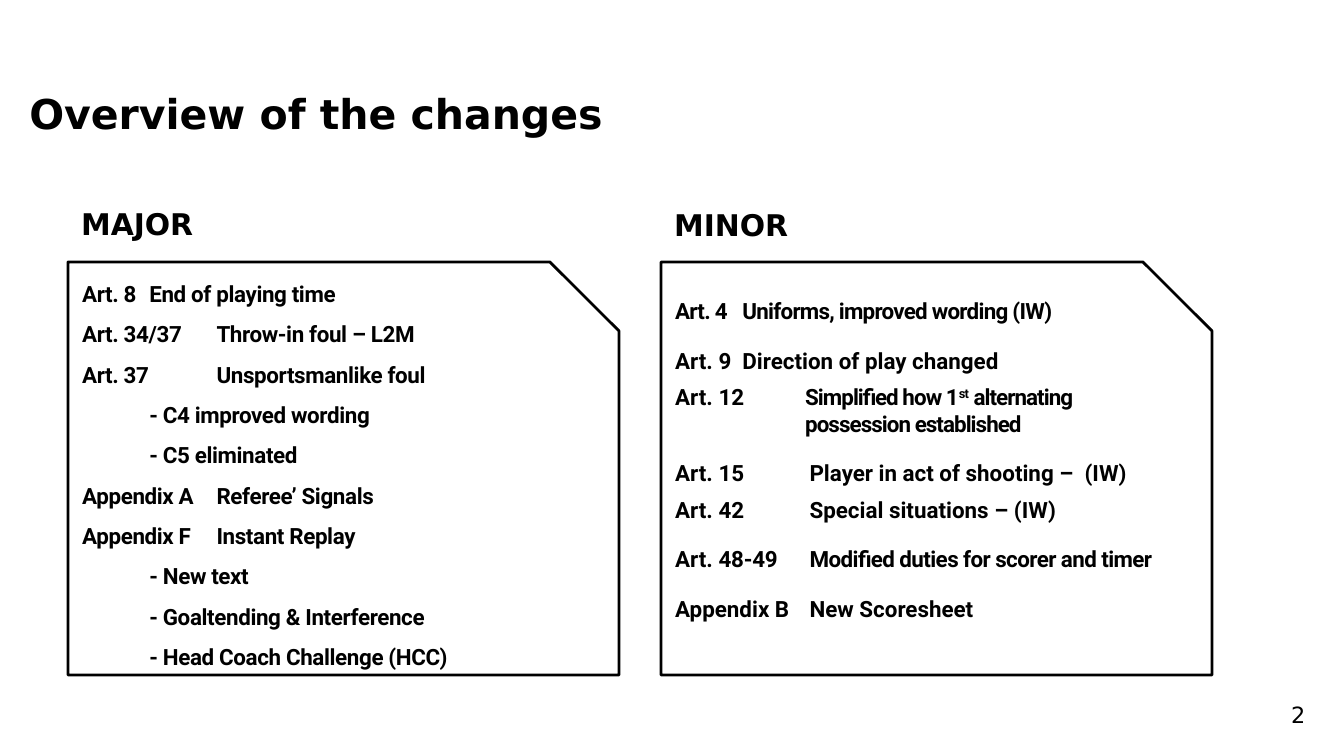
from lxml import etree
from pptx import Presentation
from pptx.dml.color import RGBColor
from pptx.enum.shapes import MSO_SHAPE
from pptx.enum.text import MSO_ANCHOR, PP_ALIGN
from pptx.oxml.ns import qn
from pptx.util import Pt

PX = 6804
BLACK = RGBColor(0x00, 0x00, 0x00)
SNIPPED = MSO_SHAPE.SNIP_ROUND_RECTANGLE
MIDDLE = MSO_ANCHOR.MIDDLE
LEFT = PP_ALIGN.LEFT
HEADING_FONT = "DejaVu Sans"
LIST_FONT = "Roboto"
TITLE_ONLY = 5
TAB = 130
INDENT = 1

MAJOR = [
    "Art. 8 \tEnd of playing time",
    "Art. 34/37 \tThrow-in foul – L2M",
    "Art. 37 \tUnsportsmanlike foul",
    "\t- C4 improved wording",
    "\t- C5 eliminated",
    "Appendix A \tReferee’ Signals",
    "Appendix F \tInstant Replay",
    "\t- New text",
    "\t- Goaltending & Interference",
    "\t- Head Coach Challenge (HCC)",
]
MAJOR_ROWS = [(1.5, 0, [(text, -20)]) for text in MAJOR]
MINOR_ROWS = [
    (1.5, 0, [("Art. 4 \tUniforms, improved wording (IW)", -40)]),
    (1.5, 0, [("Art. 9\tDirection of play changed", 0)]),
    (1.0, TAB, [("Art. 12 \t", 0), ("Simplified how 1", -50), ("st", -50, 30000),
                (" alternating possession established", -50)]),
    (1.5, 0, [("Art. 15 \tPlayer in act of shooting –  (IW)", 0)]),
    (1.0, 0, [("Art. 42 \tSpecial situations – (IW)", 0)]),
    (1.5, 0, [("Art. ", 0), ("48-49\t", -10),
              ("Modified duties for scorer and timer", -30)]),
    (1.5, 0, [("Appendix B \tNew Scoresheet", 0)]),
]


def place(shape, left, top, width, height):
    """Move and size a shape in px."""
    shape.left, shape.top = left * PX, top * PX
    shape.width, shape.height = width * PX, height * PX


def style(para, name, size, bold=True):
    """Set the font of a whole paragraph."""
    para.alignment = LEFT
    para.font.name = name
    para.font.size = Pt(size)
    para.font.bold = bold
    para.font.color.rgb = BLACK


def add_snipped(page, left, top, width, height):
    """Add an unfilled rectangle with one snipped corner."""
    box = page.shapes.add_shape(SNIPPED, 0, 0, 0, 0)
    place(box, left, top, width, height)
    box.adjustments[0] = 0
    box.adjustments[1] = 0.167
    box.shadow.inherit = False
    box.fill.background()
    box.line.fill.background()
    box.text_frame.word_wrap = True
    box.text_frame.vertical_anchor = MIDDLE
    return box


def add_label(page, text, left, top):
    """Add the heading above a list."""
    para = add_snipped(page, left, top, 477, 48).text_frame.paragraphs[0]
    para.text = text
    para.line_spacing = 1.2
    style(para, HEADING_FONT, 16)


def add_row(para, spacing, before, hanging, spans):
    """Fill one list paragraph with tabbed, tracked spans."""
    para.line_spacing = spacing
    para.space_before = Pt(before)
    properties = para._p.get_or_add_pPr()
    properties.set("marL", str((INDENT + hanging) * PX))
    properties.set("indent", str(-hanging * PX))
    tabs = etree.SubElement(properties, qn("a:tabLst"))
    etree.SubElement(tabs, qn("a:tab"), pos=str(TAB * PX), algn="l")
    style(para, LIST_FONT, 12)
    for text, tracking, *baseline in spans:
        span = para.add_run()
        span.text = text
        span.font._element.set("spc", str(tracking))
        if baseline:
            span.font._element.set("baseline", str(baseline[0]))


def add_list(page, left, rows, before=0, bottom=7):
    """Add an outlined panel holding a two-column list."""
    panel = add_snipped(page, left, 262, 551, 413)
    panel.line.color.rgb = BLACK
    panel.line.width = Pt(1.5)
    frame = panel.text_frame
    frame.margin_bottom = bottom * PX
    for index, (spacing, hanging, spans) in enumerate(rows):
        para = frame.add_paragraph() if index else frame.paragraphs[0]
        add_row(para, spacing, before, hanging, spans)


def add_title(page, text):
    """Fill and move the title placeholder."""
    title = page.shapes.title
    place(title, 16, 82, 1037, 63)
    title.text_frame.text = text
    title.text_frame.vertical_anchor = MIDDLE
    style(title.text_frame.paragraphs[0], HEADING_FONT, 22)


def add_page_number(page, number):
    """Add the page number in the lower right corner."""
    box = page.shapes.add_textbox(0, 0, 0, 0)
    place(box, 1278, 695, 66, 40)
    box.text_frame.word_wrap = True
    para = box.text_frame.paragraphs[0]
    para.text = number
    style(para, HEADING_FONT, 12, bold=False)


def main():
    """Build and save the deck."""
    deck = Presentation()
    deck.slide_width, deck.slide_height = 1344 * PX, 756 * PX
    page = deck.slides.add_slide(deck.slide_layouts[TITLE_ONLY])
    add_title(page, "Overview of the changes")
    add_label(page, "MAJOR", 68, 196)
    add_list(page, 68, MAJOR_ROWS)
    add_label(page, "MINOR", 661, 197)
    add_list(page, 661, MINOR_ROWS, before=5, bottom=38)
    add_page_number(page, "2")
    deck.save("out.pptx")


if __name__ == "__main__":
    main()
